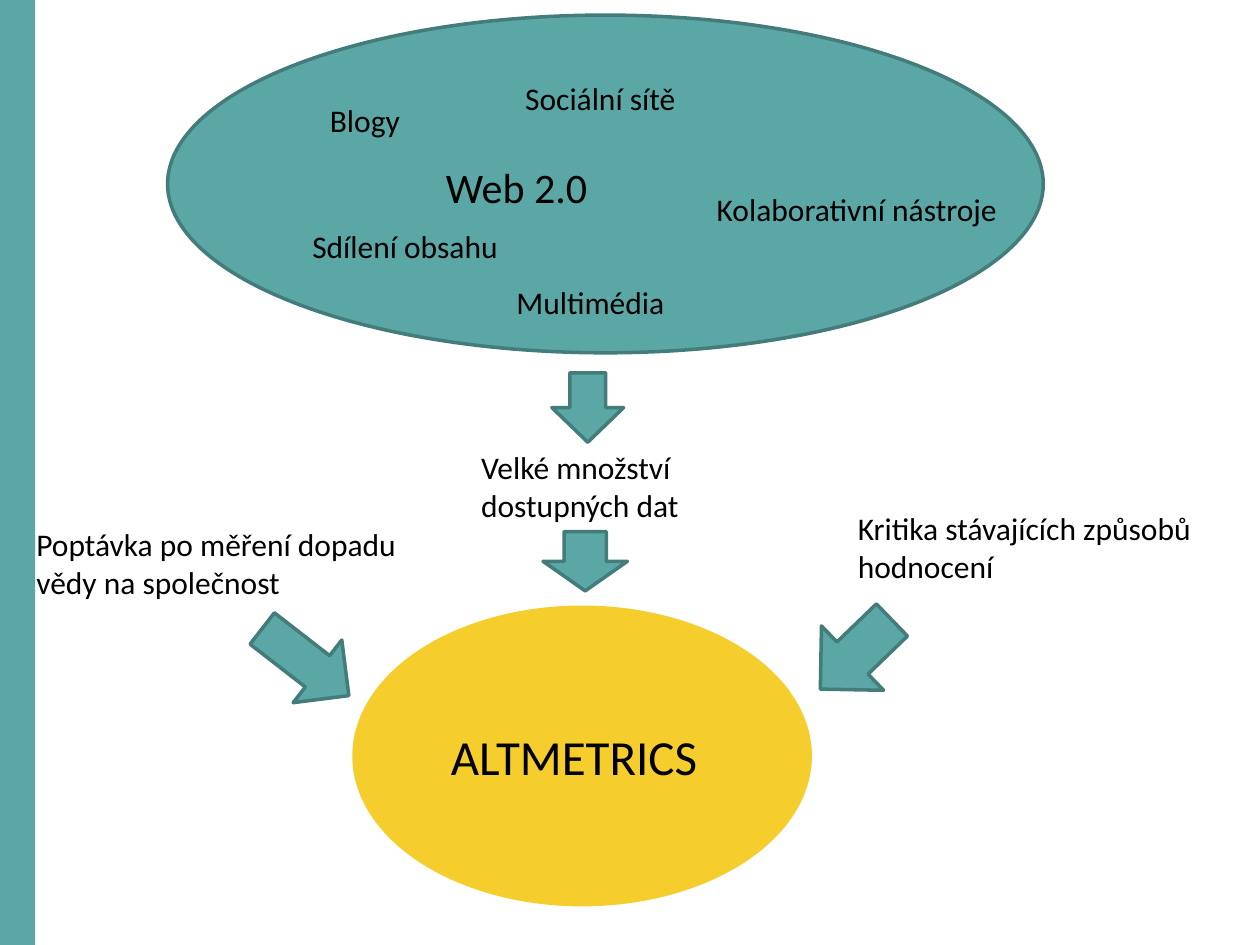
from pptx import Presentation
from pptx.dml.color import RGBColor
from pptx.enum.shapes import MSO_SHAPE
from pptx.util import Inches, Pt

RECTANGLE, OVAL = MSO_SHAPE.RECTANGLE, MSO_SHAPE.OVAL
DOWN, RIGHT = MSO_SHAPE.DOWN_ARROW, MSO_SHAPE.RIGHT_ARROW

TEAL = RGBColor(0x5A, 0xA7, 0xA5)
DARK_TEAL = RGBColor(0x43, 0x7C, 0x7A)
YELLOW = RGBColor(0xF5, 0xCD, 0x2D)
BLACK = RGBColor(0, 0, 0)
FONT = "Calibri"

# Boxes are (left, top, width, height) in inches.
SIDE_BAR = (0, 0, 0.28, 7.5)
WEB_ELLIPSE = (1.33, 0.12, 6.95, 2.68)
ALTMETRICS_ELLIPSE = (2.81, 4.82, 3.62, 2.36)

LABELS = [  # text, box, size
    ("Web 2.0", (3.44, 1.23, 2.31, 0.42), 24),
    ("Blogy", (2.52, 0.75, 1.8, 0.34), 18),
    ("Sociální sítě", (4.07, 0.58, 2.2, 0.34), 18),
    ("Sdílení obsahu", (2.38, 1.75, 2.61, 0.34), 18),
    ("Kolaborativní nástroje", (5.59, 1.46, 2.46, 0.59), 18),
    ("Multimédia", (4, 2.2, 2.27, 0.34), 18),
    ("Velké množství dostupných dat", (3.72, 3.51, 2.68, 0.71), 18),
    ("Poptávka po měření dopadu vědy na společnost", (0.19, 4.12, 3.35, 0.71), 18),
    ("Kritika stávajících způsobů hodnocení", (6.71, 3.99, 3.15, 0.71), 18),
    ("ALTMETRICS", (3.48, 5.72, 2.28, 0.57), 28),
]

ARROWS = [  # preset, box, rotation
    (DOWN, (4.38, 2.96, 0.57, 0.55), 0),
    (DOWN, (4.31, 4.22, 0.67, 0.47), 0),
    (RIGHT, (1.99, 4.94, 0.87, 0.63), 37.8),
    (DOWN, (6.44, 4.8, 0.71, 0.79), 46),
]


def add_filled_shape(slide, preset, box, fill, line=None, rotation=0):
    shape = slide.shapes.add_shape(preset, *map(Inches, box))
    shape.shadow.inherit = False
    shape.rotation = rotation
    shape.fill.solid()
    shape.fill.fore_color.rgb = fill
    if line is None:
        shape.line.fill.background()
    else:
        shape.line.color.rgb = line
        shape.line.width = Pt(2)


def add_label(slide, text, box, size):
    frame = slide.shapes.add_textbox(*map(Inches, box)).text_frame
    frame.word_wrap = True
    paragraph = frame.paragraphs[0]
    paragraph.text = text
    paragraph.font.name = FONT
    paragraph.font.size = Pt(size)
    paragraph.font.color.rgb = BLACK


def main():
    presentation = Presentation()
    presentation.slide_width = Inches(10)
    presentation.slide_height = Inches(7.5)
    slide = presentation.slides.add_slide(presentation.slide_layouts[6])

    add_filled_shape(slide, RECTANGLE, SIDE_BAR, TEAL)
    add_filled_shape(slide, OVAL, ALTMETRICS_ELLIPSE, YELLOW, YELLOW)
    add_filled_shape(slide, OVAL, WEB_ELLIPSE, TEAL, DARK_TEAL)
    for text, box, size in LABELS:
        add_label(slide, text, box, size)
    for preset, box, rotation in ARROWS:
        add_filled_shape(slide, preset, box, TEAL, DARK_TEAL, rotation)

    presentation.save("out.pptx")


if __name__ == "__main__":
    main()
